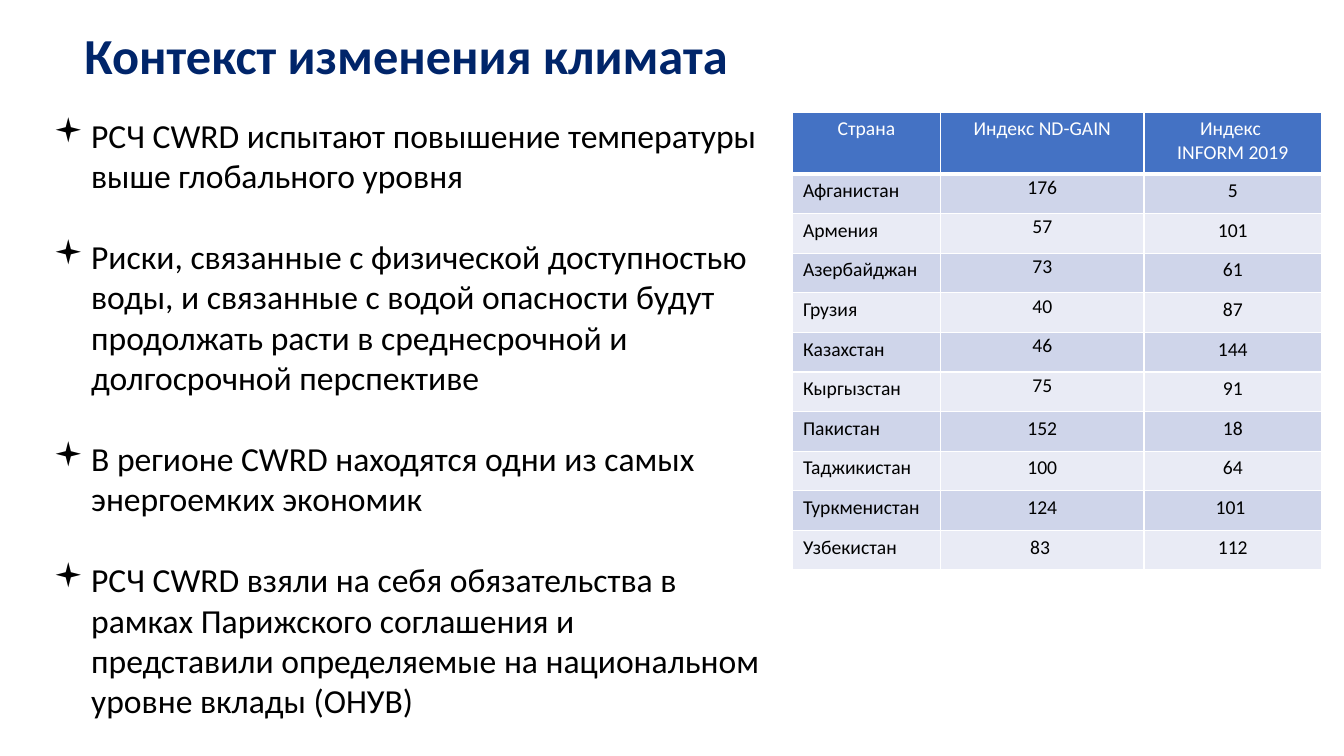
from lxml import etree
from pptx import Presentation
from pptx.dml.color import RGBColor
from pptx.enum import text
from pptx.oxml import ns
from pptx.util import Pt


def style(font, size, color, bold=False):
    font.name, font.size, font.bold = "Calibri", Pt(size), bold
    font.color.rgb = RGBColor.from_string(color)


def edge(cell, side, width):
    props = cell._tc.get_or_add_tcPr()
    line = etree.SubElement(props, ns.qn("a:ln" + side), w=str(Pt(width)))
    fill = etree.SubElement(line, ns.qn("a:solidFill"))
    etree.SubElement(fill, ns.qn("a:srgbClr"), val="FFFFFF")


deck = Presentation()
deck.slide_width, deck.slide_height = Pt(960), Pt(540)
slide = deck.slides.add_slide(deck.slide_layouts[6])

# Title
title = slide.shapes.add_textbox(Pt(53.3), Pt(-10.8), Pt(828), Pt(104.4)).text_frame
title.word_wrap = True
title.vertical_anchor = text.MSO_ANCHOR.MIDDLE
para = title.paragraphs[0]
para.line_spacing = 0.9
run = para.add_run()
run.text = "Контекст изменения климата"
style(run.font, 36, "00256A", True)

# Bullet points
points = [
    "РСЧ CWRD испытают повышение температуры выше глобального уровня",
    "Риски, связанные с физической доступностью воды, и связанные с водой "
    "опасности будут продолжать расти в среднесрочной и долгосрочной перспективе",
    "В регионе CWRD находятся одни из самых энергоемких экономик",
    "РСЧ CWRD взяли на себя обязательства в рамках Парижского соглашения и "
    "представили определяемые на национальном уровне вклады (ОНУВ)",
]
body = slide.shapes.add_textbox(Pt(31), Pt(78.5), Pt(519.8), Pt(443.5)).text_frame
body.word_wrap = True
for i, point in enumerate(points):
    para = body.paragraphs[0] if i == 0 else body.add_paragraph()
    props = para._p.get_or_add_pPr()
    props.set("marL", str(Pt(27)))
    props.set("indent", str(Pt(-27)))
    etree.SubElement(props, ns.qn("a:buFont"), typeface="Wingdings")
    etree.SubElement(props, ns.qn("a:buChar"), char="▪")
    if i:
        para.space_before = Pt(29)
    run = para.add_run()
    run.text = point
    style(run.font, 24, "000000")

# Country index table
rows = [
    ("Страна", "Индекс ND-GAIN", "Индекс \nINFORM 2019"),
    ("Афганистан", "176", "5"),
    ("Армения", "57", "101"),
    ("Азербайджан", "73", "61"),
    ("Грузия", "40", "87"),
    ("Казахстан", "46", "144"),
    ("Кыргызстан", "75", "91"),
    ("Пакистан", "152", "18"),
    ("Таджикистан", "100", "64"),
    ("Туркменистан", "124", "101 "),
    ("Узбекистан", "83 ", "112"),
]
table = slide.shapes.add_table(len(rows), 3, Pt(566), Pt(80), Pt(378), Pt(327)).table
for col, width in zip(table.columns, (105.8, 145.4, 126.8)):
    col.width = Pt(width)
for r, row in enumerate(rows):
    table.rows[r].height = Pt(28.3 if r else 44.3)
    back = ("E9EBF5", "CFD5EA")[r % 2] if r else "4472C4"
    for c, words in enumerate(row):
        cell = table.cell(r, c)
        tight = c == 1 and 1 <= r <= 6
        cell.margin_left = cell.margin_right = Pt(5.4 if tight else 7.6)
        cell.margin_top = cell.margin_bottom = Pt(0 if tight else 3.6)
        for side in "LRTB":
            edge(cell, side, 3 if r == 0 and side == "B" else 1)
        cell.fill.solid()
        cell.fill.fore_color.rgb = RGBColor.from_string(back)
        para = cell.text_frame.paragraphs[0]
        if r == 0 or c:
            para.alignment = text.PP_ALIGN.CENTER
        if tight:
            para.line_spacing = 1.07
        for n, part in enumerate(words.split("\n")):
            if n:
                para.add_line_break()
            run = para.add_run()
            run.text = part
            style(run.font, 14, "000000" if r else "FFFFFF")

deck.save("out.pptx")
